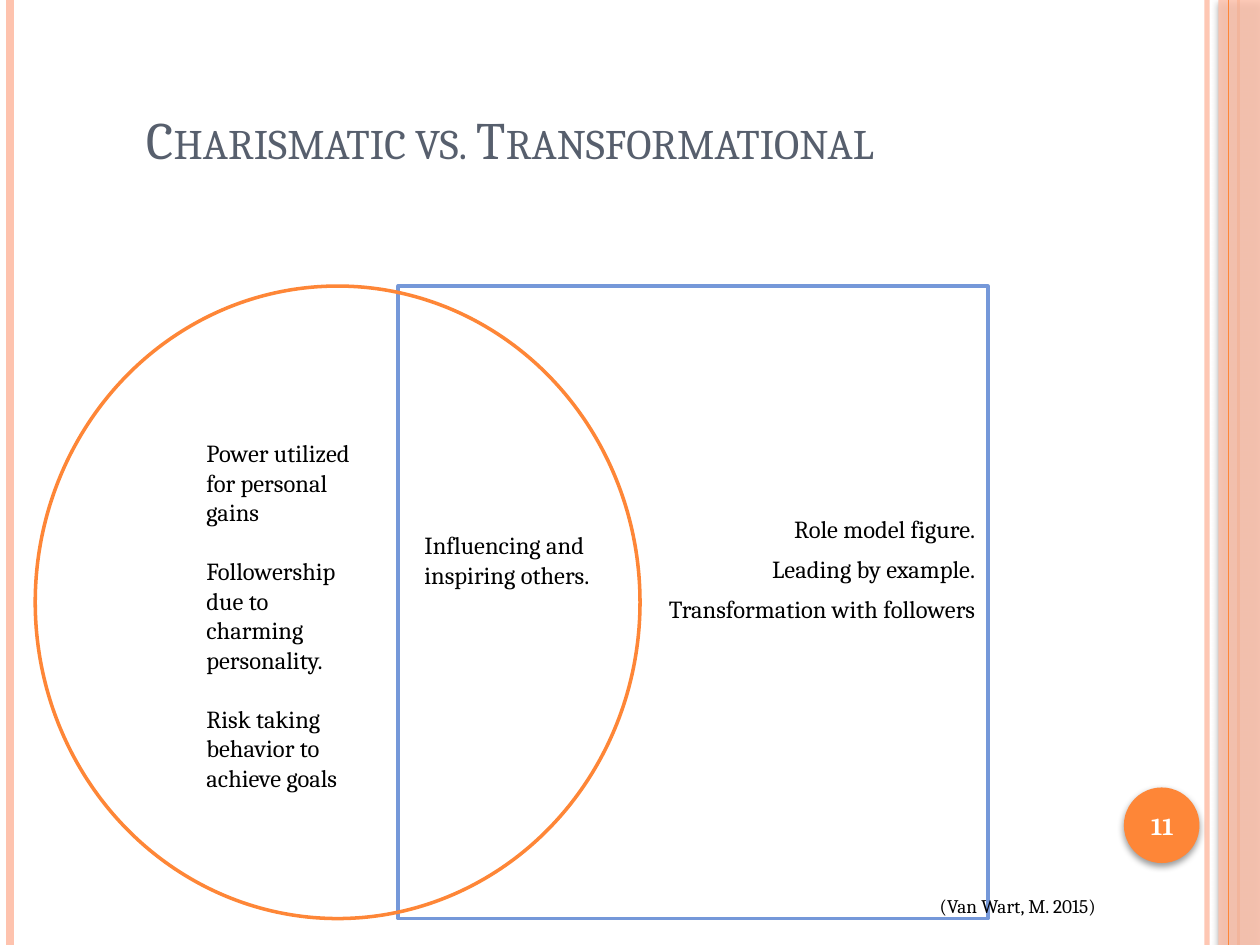
"""Build a slide that compares charismatic and transformational leadership."""
from lxml.etree import SubElement
from pptx import Presentation
from pptx.dml.color import RGBColor
from pptx.enum.shapes import MSO_CONNECTOR, MSO_SHAPE
from pptx.enum.text import MSO_ANCHOR, PP_ALIGN
from pptx.oxml.ns import qn
from pptx.util import Inches, Pt

ORANGE = RGBColor(0xFE, 0x86, 0x37)
PEACH = RGBColor(0xFE, 0xC3, 0xAE)
BLUE = RGBColor(0x75, 0x98, 0xD9)
SLATE = RGBColor(0x57, 0x5F, 0x6D)
BLACK = RGBColor(0, 0, 0)
WHITE = RGBColor(0xFF, 0xFF, 0xFF)

presentation = Presentation()
presentation.slide_width = Inches(10)
presentation.slide_height = Inches(7.5)
COLUMN = presentation.slide_width // 100
ROW = presentation.slide_height // 75
slide = presentation.slides.add_slide(presentation.slide_layouts[6])


def add_rule(column, width, color, opacity=100):
    rule = slide.shapes.add_connector(
        MSO_CONNECTOR.STRAIGHT, int(column * COLUMN), 0,
        int(column * COLUMN), presentation.slide_height)
    rule.line.width = Pt(width)
    rule.line.color.rgb = color
    properties = rule._element.spPr
    SubElement(next(properties.iter(qn("a:srgbClr"))), qn("a:alpha"), val=str(opacity * 1000))
    SubElement(properties, qn("a:effectLst"))


def write(shape, *lines, size=14, color=BLACK, align=PP_ALIGN.LEFT, anchor=MSO_ANCHOR.TOP,
          gap=0, bold=False, small_caps=False):
    frame = shape.text_frame
    frame.word_wrap = True
    frame.vertical_anchor = anchor
    for index, line in enumerate(lines):
        paragraph = frame.paragraphs[0] if index == 0 else frame.add_paragraph()
        paragraph.alignment = align
        paragraph.space_before = Pt(gap if index else 0)
        run = paragraph.add_run()
        run.text = line
        run.font.name = "Cambria"
        run.font.size = Pt(size)
        run.font.bold = bold
        run.font.color.rgb = color
        if small_caps:
            run.font._element.set("cap", "small")


for column, width, color, opacity in (
        (95.8, 3, PEACH, 93), (0.8, 4.5, PEACH, 100), (98.3, 1.5, ORANGE, 100)):
    add_rule(column, width, color, opacity)

for kind, left, top, width, height, color, opacity in (
        (MSO_SHAPE.RECTANGLE, 96.7, 0, 3.3, 75, PEACH, 87),
        (MSO_SHAPE.OVAL, 89.2, 62.5, 6, 6, ORANGE, 100)):
    shape = slide.shapes.add_shape(
        kind, int(left * COLUMN), int(top * ROW), int(width * COLUMN), int(height * ROW))
    shape.fill.solid()
    shape.fill.fore_color.rgb = color
    shape.line.fill.background()
    shape.shadow.inherit = False
    properties = shape._element.spPr
    SubElement(next(properties.iter(qn("a:srgbClr"))), qn("a:alpha"), val=str(opacity * 1000))
    shadow = SubElement(properties.find(qn("a:effectLst")), qn("a:outerShdw"),
                        blurRad=str(Pt(4)), dist=str(Pt(2)), dir="5400000", rotWithShape="0")
    shadow_color = SubElement(shadow, qn("a:srgbClr"), val="000000")
    SubElement(shadow_color, qn("a:alpha"), val="40000")

add_rule(97.5, 0.75, ORANGE)

outlines = []
for kind, left, width, color in (
        (MSO_SHAPE.RECTANGLE, 31.6, 46.8, BLUE),
        (MSO_SHAPE.FLOWCHART_CONNECTOR, 2.8, 48, ORANGE)):
    shape = slide.shapes.add_shape(
        kind, int(left * COLUMN), int(22.7 * ROW), int(width * COLUMN), int(50.2 * ROW))
    shape.fill.background()
    shape.line.color.rgb = color
    shape.line.width = Pt(2)
    shape.shadow.inherit = False
    outlines.append(shape)

transformational = outlines[0]
transformational.text_frame.margin_bottom = int(5.8 * ROW)
write(transformational, "Role model figure.", "Leading by example.", "Transformation with followers",
      align=PP_ALIGN.RIGHT, anchor=MSO_ANCHOR.MIDDLE, gap=6)

charismatic_lines = ("Power utilized for personal gains",
                     "Followership due to charming personality.",
                     "Risk taking behavior to achieve goals")
for left, top, width, height, lines, text_format in (
        (5.6, 6.7, 70.5, 7.3, ("Charismatic vs. Transformational ",),
         dict(size=30, color=SLATE, align=PP_ALIGN.CENTER, anchor=MSO_ANCHOR.BOTTOM,
              small_caps=True)),
        (32.7, 41.6, 15.7, 8, ("Influencing and inspiring others.",), {}),
        (15.4, 34.3, 15, 33.6, charismatic_lines, dict(gap=17)),
        (73.6, 70.5, 18.4, 2.8, ("(Van Wart, M. 2015)",), dict(size=11)),
        (88.9, 62.7, 6.7, 5.7, ("11",),
         dict(color=WHITE, align=PP_ALIGN.CENTER, anchor=MSO_ANCHOR.MIDDLE, bold=True))):
    box = slide.shapes.add_textbox(
        int(left * COLUMN), int(top * ROW), int(width * COLUMN), int(height * ROW))
    write(box, *lines, **text_format)

presentation.save("out.pptx")
